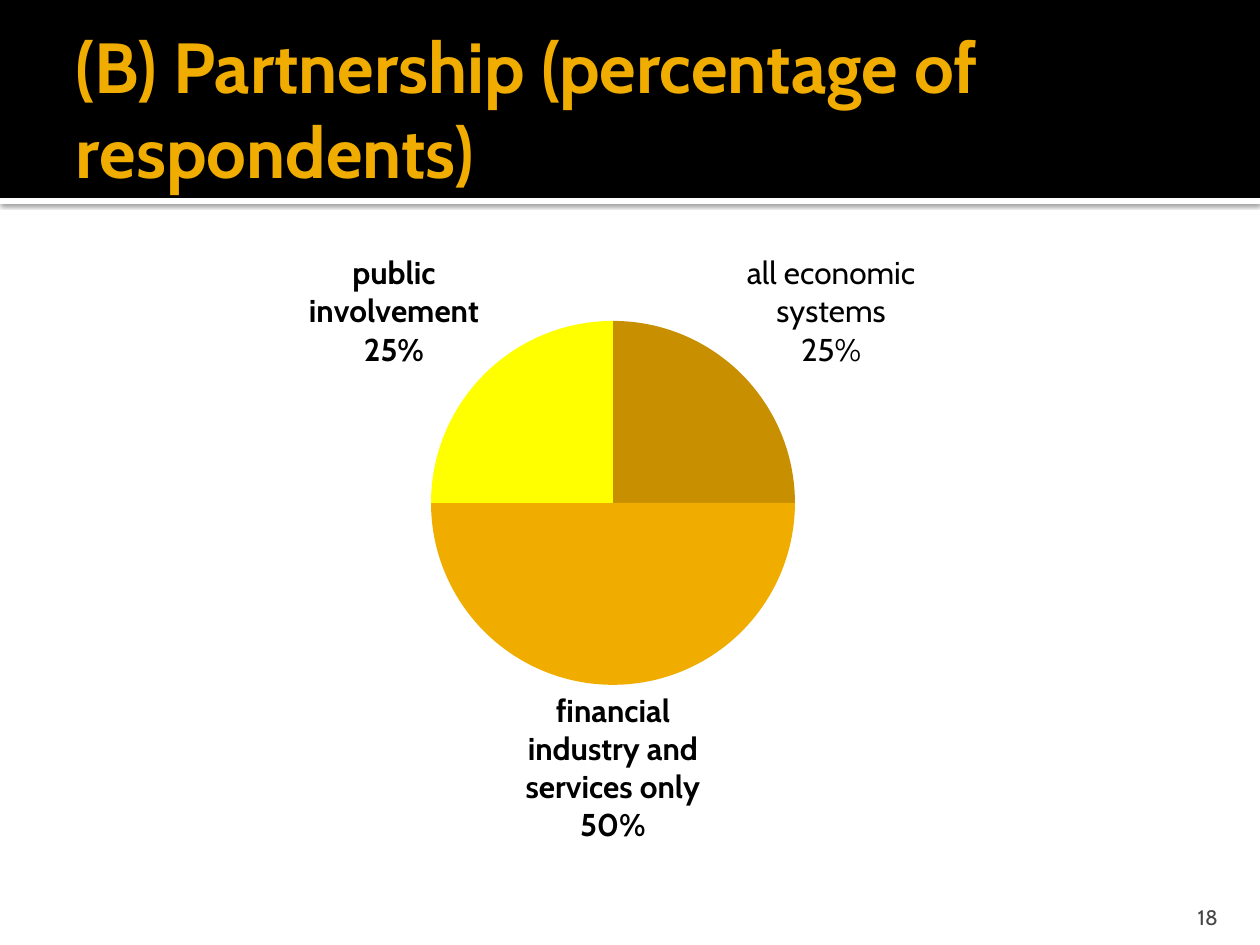
from dataclasses import dataclass

from lxml.etree import SubElement
from pptx import Presentation
from pptx.chart.data import CategoryChartData
from pptx.dml.color import RGBColor
from pptx.enum.chart import XL_CHART_TYPE as ChartType, XL_LABEL_POSITION as LabelPosition
from pptx.enum.shapes import MSO_SHAPE as Shape
from pptx.enum.text import MSO_ANCHOR as Anchor, MSO_AUTO_SIZE as AutoSize, PP_ALIGN as Align
from pptx.oxml import parse_xml
from pptx.oxml.ns import nsdecls, qn
from pptx.util import Pt

PX = 914400 // 126
TITLE = "(B) Partnership (percentage of respondents)"
PAGE_NUMBER = "18"
SERIES = "Series 1"
FIRST_LABEL = ["all economic systems", "25%"]

HEADER = (0, 0, 1260, 198)
STRIP = (0, 198, 1260, 6)
TITLE_BOX = (63, 21, 1134, 173)
NUMBER_BOX = (1130, 892, 101, 38)
CHART = (44, 224, 1134, 638)
PIE = (431, 321, 364, 364)


@dataclass(frozen=True)
class Theme:
    font: str = "Cabin"
    black: str = "000000"
    white: str = "FFFFFF"
    gold: str = "F0AD00"
    dark_gold: str = "C88F00"
    yellow: str = "FFFF00"
    gray: str = "454545"
    title_size: float = 40.5
    label_size: float = 18
    number_size: float = 12


THEME = Theme()
SLICES = [
    ("all economic system", 25, THEME.dark_gold),
    ("financial industry and services only", 50, THEME.gold),
    ("public involvement", 25, THEME.yellow),
]


def scaled(area):
    return [length * PX for length in area]


def style(font, size, color, bold=False):
    font.name = THEME.font
    font.size = Pt(size)
    font.bold = bold
    font.color.rgb = RGBColor.from_string(color)


def add_span(para, text, size, color, bold=False):
    span = para.add_run()
    span.text = text
    style(span.font, size, color, bold)


def set_frame(box, anchor, insets):
    frame = box.text_frame
    frame.word_wrap = True
    frame.auto_size = AutoSize.NONE
    frame.vertical_anchor = anchor
    frame.margin_left, frame.margin_top, frame.margin_right, frame.margin_bottom = scaled(insets)
    return frame.paragraphs[0]


def add_band(page, area, color):
    band = page.shapes.add_shape(Shape.RECTANGLE, *scaled(area))
    band.shadow.inherit = False
    band.fill.solid()
    band.fill.fore_color.rgb = RGBColor.from_string(color)
    band.line.fill.background()
    return band


def add_shadow(band):
    effects = band._element.spPr.find(qn("a:effectLst"))
    effects.append(parse_xml(
        f'<a:outerShdw {nsdecls("a")} blurRad="{Pt(2.5)}" dist="{Pt(0.8)}" dir="5400000" '
        f'algn="t" rotWithShape="0"><a:srgbClr val="{THEME.black}">'
        '<a:alpha val="60000"/></a:srgbClr></a:outerShdw>'))


def place_pie(chart):
    plot_area = chart._chartSpace.chart.plotArea
    old = plot_area.find(qn("c:layout"))
    if old is not None:
        plot_area.remove(old)
    layout = parse_xml(f'<c:layout {nsdecls("c")}/>')
    manual = SubElement(layout, qn("c:manualLayout"))
    left, top, width, height = CHART
    settings = [
        ("layoutTarget", "inner"), ("xMode", "edge"), ("yMode", "edge"),
        ("x", round((PIE[0] - left) / width, 4)), ("y", round((PIE[1] - top) / height, 4)),
        ("w", round(PIE[2] / width, 4)), ("h", round(PIE[3] / height, 4)),
    ]
    for name, value in settings:
        SubElement(manual, qn(f"c:{name}")).set("val", str(value))
    plot_area.insert(0, layout)


def label_slices(series):
    labels = series.data_labels
    labels.show_value = False
    labels.show_category_name = labels.show_percentage = True
    labels.number_format = "0%"
    labels.number_format_is_linked = False
    labels.position = LabelPosition.OUTSIDE_END
    style(labels.font, THEME.label_size, THEME.black, True)
    separator = parse_xml(f'<c:separator {nsdecls("c")}>\n</c:separator>')
    labels._element.find(qn("c:showBubbleSize")).addnext(separator)

    first = series.points[0].data_label
    frame = first.text_frame
    for index, text in enumerate(FIRST_LABEL):
        para = frame.add_paragraph() if index else frame.paragraphs[0]
        add_span(para, text, THEME.label_size, THEME.black)
    first.position = LabelPosition.OUTSIDE_END


def add_pie(page):
    data = CategoryChartData()
    data.categories = [name for name, _, _ in SLICES]
    data.add_series(SERIES, [value for _, value, _ in SLICES])
    chart = page.shapes.add_chart(ChartType.PIE, *scaled(CHART), data).chart
    chart.has_legend = False
    chart.has_title = False
    style(chart.font, THEME.label_size, THEME.black)
    plot = chart.plots[0]
    plot.vary_by_categories = True
    series = plot.series[0]
    for index, (_, _, color) in enumerate(SLICES):
        slice_format = series.points[index].format
        slice_format.fill.solid()
        slice_format.fill.fore_color.rgb = RGBColor.from_string(color)
        slice_format.line.fill.background()
    label_slices(series)
    place_pie(chart)


def main():
    deck = Presentation()
    deck.slide_width, deck.slide_height = 1260 * PX, 945 * PX
    page = deck.slides.add_slide(deck.slide_layouts[5])

    strip = add_band(page, STRIP, THEME.white)
    add_shadow(strip)
    header = add_band(page, HEADER, THEME.black)

    title = page.shapes.title
    header._element.addnext(title._element)
    title.left, title.top, title.width, title.height = scaled(TITLE_BOX)
    para = set_frame(title, Anchor.MIDDLE, (13, 6, 6, 6))
    para.alignment = Align.LEFT
    add_span(para, TITLE, THEME.title_size, THEME.gold, True)

    number = page.shapes.add_textbox(*scaled(NUMBER_BOX))
    para = set_frame(number, Anchor.BOTTOM, (13, 6, 13, 0))
    para.alignment = Align.RIGHT
    add_span(para, PAGE_NUMBER, THEME.number_size, THEME.gray)

    add_pie(page)
    deck.save("out.pptx")


if __name__ == "__main__":
    main()
